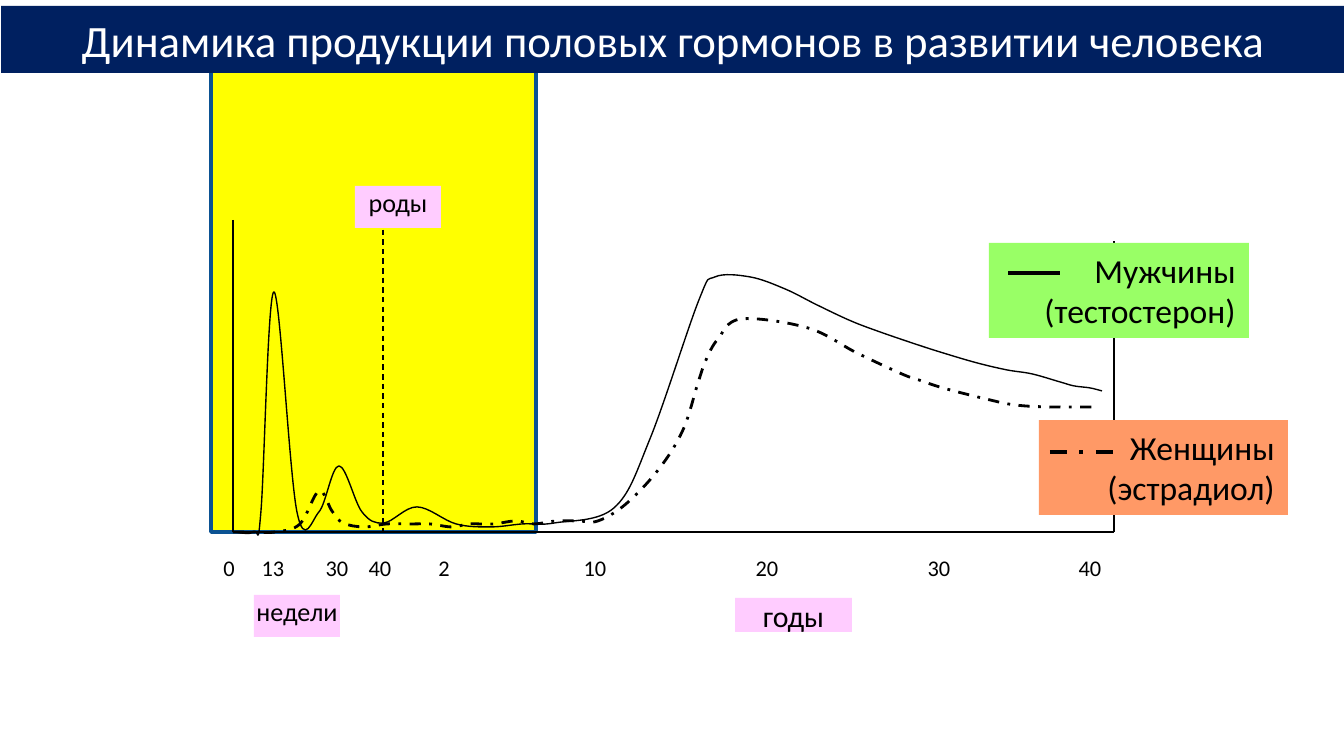
from lxml.etree import SubElement
from pptx import Presentation
from pptx.dml.color import RGBColor
from pptx.enum.dml import MSO_LINE_DASH_STYLE as DASH
from pptx.enum.shapes import MSO_CONNECTOR, MSO_SHAPE
from pptx.enum.text import MSO_ANCHOR, MSO_AUTO_SIZE, PP_ALIGN as ALIGN
from pptx.oxml.ns import qn
from pptx.util import Pt

EMU_PER_PX = 914400 / 134.4
FONT = "Calibri"
COLORS = {
    "black": "000000", "white": "FFFFFF", "navy": "002060", "border": "0B5292",
    "yellow": "FFFF00", "pink": "FFCCFF", "green": "99FF66", "orange": "FF9966",
}

# Points that each smooth curve passes through
TESTOSTERONE = [
    (233, 532), (254, 532), (261, 511), (274, 292), (297, 512), (319, 512),
    (339, 466), (362, 512), (384, 523), (417, 507), (456, 524), (491, 527),
    (523, 524), (555, 523), (614, 508), (650, 439), (699, 300), (715, 277),
    (750, 277), (785, 289), (817, 305), (851, 321), (880, 332), (915, 344),
    (943, 353), (977, 363), (1007, 370), (1032, 374), (1060, 382),
    (1074, 386), (1090, 388), (1102, 391),
]
ESTRADIOL = [
    (233, 532), (254, 532), (276, 532), (300, 524), (319, 491), (332, 511),
    (343, 523), (364, 527), (387, 524), (413, 524), (430, 524), (452, 527),
    (469, 524), (493, 524), (516, 521), (534, 524), (556, 521), (578, 521),
    (598, 521), (626, 504), (659, 469), (683, 430), (698, 383), (706, 360),
    (718, 339), (741, 319), (808, 328), (857, 353), (902, 374), (919, 380),
    (943, 388), (986, 399), (1015, 405), (1050, 407), (1093, 407),
]
# Tick label and the centre of its box
TICKS = [("0", 229), ("13", 273), ("30", 337), ("40", 380), ("2", 444),
         ("10", 595), ("20", 767), ("30", 939), ("40", 1090)]


def emu(px):
    return round(px * EMU_PER_PX)


def color(name):
    return RGBColor.from_string(COLORS[name])


def bezier_points(knots):
    """Control and end points of a Catmull-Rom curve, three per segment."""
    padded = [knots[0], *knots, knots[-1]]
    points = []
    for before, start, end, after in zip(padded, padded[1:], padded[2:], padded[3:]):
        points.append(tuple(s + (e - b) / 6 for b, s, e in zip(before, start, end)))
        points.append(tuple(e - (a - s) / 6 for s, e, a in zip(start, end, after)))
        points.append(end)
    return points


class SlideBuilder:
    def __init__(self, slide):
        self.slide = slide
        self.shapes = slide.shapes

    def outline(self, shape, name, width, dash=None):
        shape.line.color.rgb = color(name)
        shape.line.width = Pt(width)
        if dash:
            shape.line.dash_style = dash

    def set_text(self, shape, text, size, align, ink="black", inset=None):
        frame = shape.text_frame
        frame.text = text
        frame.word_wrap = True
        frame.auto_size = MSO_AUTO_SIZE.NONE
        frame.vertical_anchor = MSO_ANCHOR.TOP
        if inset is not None:
            frame.margin_left = frame.margin_right = inset
            frame.margin_top = frame.margin_bottom = inset
        paragraph = frame.paragraphs[0]
        paragraph.alignment = align
        font = paragraph.runs[0].font
        font.name, font.size, font.color.rgb = FONT, Pt(size), color(ink)

    def title(self, text, left, top, width, height):
        shape = self.shapes.title
        shape.left, shape.top = emu(left), emu(top)
        shape.width, shape.height = emu(width), emu(height)
        shape.fill.solid()
        shape.fill.fore_color.rgb = color("navy")
        self.set_text(shape, text, 24, ALIGN.CENTER, "white")
        # Bring the banner in front of what is drawn so far
        self.shapes._spTree.append(shape._element)

    def box(self, left, top, width, height, fill):
        shape = self.shapes.add_shape(
            MSO_SHAPE.RECTANGLE, emu(left), emu(top), emu(width), emu(height))
        shape.shadow.inherit = False
        shape.fill.solid()
        shape.fill.fore_color.rgb = color(fill)
        shape.line.fill.background()
        return shape

    def label(self, text, left, top, width, height, fill, size):
        shape = self.box(left, top, width, height, fill)
        self.set_text(shape, text, size, ALIGN.CENTER, inset=0)

    def legend(self, text, left, top, width, height, fill):
        shape = self.box(left, top, width, height, fill)
        self.set_text(shape, text, 18, ALIGN.RIGHT)

    def line(self, x1, y1, x2, y2, width=0.75, dash=None):
        connector = self.shapes.add_connector(
            MSO_CONNECTOR.STRAIGHT, emu(x1), emu(y1), emu(x2), emu(y2))
        self.outline(connector, "black", width, dash)
        SubElement(connector._element.spPr, qn("a:effectLst"))

    def curve(self, knots, width, dash=None):
        builder = self.shapes.build_freeform(*map(emu, knots[0]))
        points = [tuple(map(emu, point)) for point in bezier_points(knots)]
        builder.add_line_segments(points, close=False)
        shape = builder.convert_to_shape()
        shape.shadow.inherit = False
        shape.fill.background()
        self.outline(shape, "black", width, dash)
        # Join every three straight steps into one cubic segment
        outline = next(shape._element.iter(qn("a:moveTo"))).getparent()
        steps = outline.findall(qn("a:lnTo"))
        for first in range(0, len(steps), 3):
            cubic = SubElement(outline, qn("a:cubicBezTo"))
            for step in steps[first:first + 3]:
                cubic.append(step[0])
                outline.remove(step)


def main():
    presentation = Presentation()
    presentation.slide_width, presentation.slide_height = emu(1344), emu(756)
    slide = presentation.slides.add_slide(presentation.slide_layouts[5])
    builder = SlideBuilder(slide)

    # Highlighted early period
    period = builder.box(211, 52, 325, 480, "yellow")
    builder.outline(period, "border", 2)

    # Axes and birth marker
    builder.line(233, 220, 233, 532)
    builder.line(233, 532, 1114, 532)
    builder.line(1114, 532, 1114, 241)
    builder.line(383, 220, 383, 532, dash=DASH.DASH)

    # Axis labels
    for text, center in TICKS:
        builder.label(text, center - 18, 554, 36, 35, "white", 12)
    builder.label("роды", 355, 186, 86, 42, "pink", 14)
    builder.label("недели", 254, 595, 86, 42, "pink", 14)
    builder.label("годы", 735, 598, 117, 34, "pink", 16)

    # Hormone curves
    builder.curve(TESTOSTERONE, 0.75)
    builder.curve(ESTRADIOL, 1.5, DASH.DASH_DOT)

    # Legend
    builder.legend("Мужчины (тестостерон)", 989, 243, 260, 95, "green")
    builder.line(1008, 273, 1060, 273, 2.25)
    builder.legend("Женщины (эстрадиол)", 1039, 420, 249, 95, "orange")
    builder.line(1050, 452, 1124, 452, 2.25, DASH.DASH_DOT)

    # Title banner
    builder.title("Динамика продукции половых гормонов в развитии человека",
                  1, 6, 1344, 67)

    presentation.save("out.pptx")


if __name__ == "__main__":
    main()
